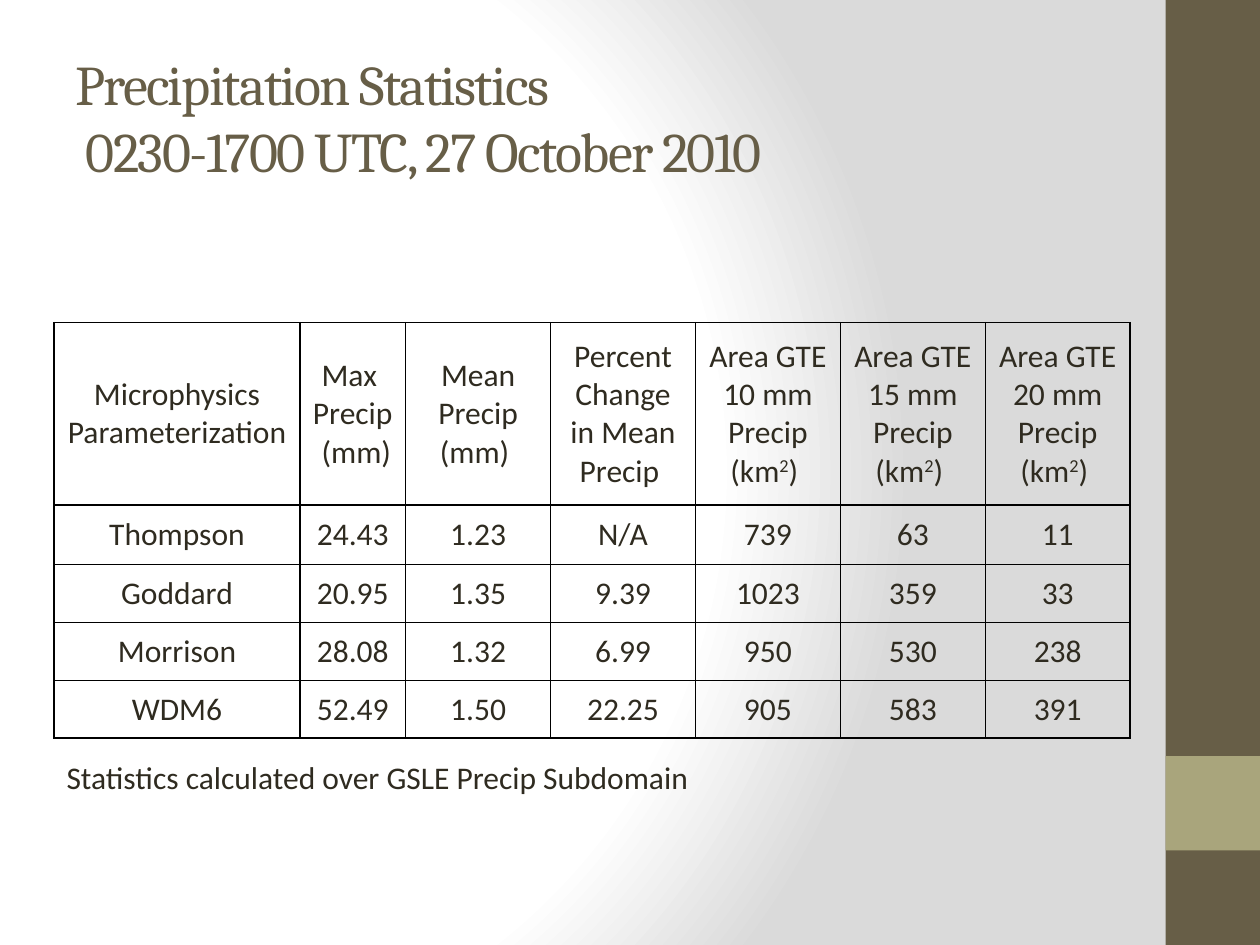
from lxml import etree
from pptx import Presentation
from pptx.dml.color import RGBColor
from pptx.enum.shapes import MSO_SHAPE
from pptx.enum.text import MSO_ANCHOR, MSO_AUTO_SIZE, PP_ALIGN
from pptx.oxml.ns import qn
from pptx.util import Inches, Pt

RECTANGLE = MSO_SHAPE.RECTANGLE
MIDDLE = MSO_ANCHOR.MIDDLE
GROW = MSO_AUTO_SIZE.SHAPE_TO_FIT_TEXT
CENTER = PP_ALIGN.CENTER

BROWN, OLIVE, INK = "675E47", "A9A57C", "2F2B20"
TITLE_FONT = {"name": "Cambria", "size": Pt(32), "bold": False}
BODY_FONT = {"name": "Calibri", "size": Pt(18), "bold": False}

COLUMN_WIDTHS = [1.95, 0.84] + [1.15] * 5
ROW_HEIGHTS = [1.45, 0.47] + [0.46] * 3
HEADERS = [
    ["Microphysics", "Parameterization "],
    ["Max ", "Precip", " (mm) "],
    ["Mean Precip (mm) "],
    ["Percent Change in Mean Precip "],
] + [[f"Area GTE {depth} mm Precip (km^2^) "] for depth in (10, 15, 20)]
RESULTS = [
    ["Thompson", "24.43", "1.23", "N/A", "739", "63", "11"],
    ["Goddard", "20.95", "1.35", "9.39", "1023", "359", "33"],
    ["Morrison", "28.08", "1.32", "6.99", "950", "530", "238"],
    ["WDM6", "52.49", "1.50", "22.25", "905", "583", "391"],
]


def color(value):
    return RGBColor.from_string(value)


def style_font(font, values, ink):
    for name, value in values.items():
        setattr(font, name, value)
    font.color.rgb = color(ink)


def paint_background(page):
    page.background.fill.gradient()
    gradient = page.element.find(".//" + qn("a:gradFill"))
    for child in list(gradient):
        gradient.remove(child)
    stops = etree.SubElement(gradient, qn("a:gsLst"))
    for position, shade in ((0, "FFFFFF"), (75, "FFFFFF"), (100, "DADADA")):
        stop = etree.SubElement(stops, qn("a:gs"), pos=str(position * 1000))
        etree.SubElement(stop, qn("a:srgbClr"), val=shade)
    circle = etree.SubElement(gradient, qn("a:path"), {"path": "circle"})
    etree.SubElement(circle, qn("a:fillToRect"), l="20000", t="50000", r="100000", b="50000")


def add_block(page, left, top, width, height, fill):
    block = page.shapes.add_shape(RECTANGLE, left, top, width, height)
    block.shadow.inherit = False
    block.fill.solid()
    block.fill.fore_color.rgb = color(fill)
    block.line.fill.background()


def add_sidebar(page, left, top, width, height):
    add_block(page, left, top, width, height, BROWN)
    add_block(page, left, top + Inches(6), width, width, OLIVE)


def add_title(page, left, top, width, height):
    frame = page.shapes.add_textbox(left, top, width, height).text_frame
    frame.word_wrap = True
    frame.vertical_anchor = MIDDLE
    para = frame.paragraphs[0]
    para.text = "Precipitation Statistics\v 0230-1700 UTC, 27 October 2010"
    for span in para.runs:
        style_font(span.font, TITLE_FONT, BROWN)
        span.font._element.set("spc", "-100")


def add_borders(cell):
    properties = cell._tc.get_or_add_tcPr()
    for index, side in enumerate(("lnL", "lnR", "lnT", "lnB")):
        line = etree.Element(qn("a:" + side), w=str(Pt(1)))
        fill = etree.SubElement(line, qn("a:solidFill"))
        etree.SubElement(fill, qn("a:srgbClr"), val="000000")
        properties.insert(index, line)


def fill_cell(cell, lines):
    cell.fill.background()
    cell.vertical_anchor = MIDDLE
    add_borders(cell)
    frame = cell.text_frame
    for index, line in enumerate(lines):
        para = frame.add_paragraph() if index else frame.paragraphs[0]
        para.alignment = CENTER
        for order, piece in enumerate(line.split("^")):
            span = para.add_run()
            span.text = piece
            style_font(span.font, BODY_FONT, INK)
            if order % 2:
                span.font._element.set("baseline", "30000")


def add_statistics(page, left, top, width, height):
    rows = [HEADERS] + [[[value] for value in result] for result in RESULTS]
    table = page.shapes.add_table(len(rows), len(HEADERS), left, top, width, height).table
    table.first_row = table.horz_banding = False
    for column, size in zip(table.columns, COLUMN_WIDTHS):
        column.width = Inches(size)
    for row, size, contents in zip(table.rows, ROW_HEIGHTS, rows):
        row.height = Inches(size)
        for cell, lines in zip(row.cells, contents):
            fill_cell(cell, lines)
            if contents is not HEADERS:
                cell.margin_left = cell.margin_right = Inches(0.07)
                cell.margin_top = cell.margin_bottom = 0


def add_note(page, left, top, width, height):
    frame = page.shapes.add_textbox(left, top, width, height).text_frame
    frame.word_wrap = False
    frame.auto_size = GROW
    span = frame.paragraphs[0].add_run()
    span.text = "Statistics calculated over GSLE Precip Subdomain"
    style_font(span.font, BODY_FONT, INK)


def main():
    deck = Presentation()
    deck.slide_width, deck.slide_height = Inches(10), Inches(7.5)
    page = deck.slides.add_slide(deck.slide_layouts[6])
    paint_background(page)
    add_sidebar(page, Inches(9.25), 0, Inches(0.75), deck.slide_height)
    add_title(page, Inches(0.5), Inches(0.3), Inches(8.33), Inches(1.25))
    add_statistics(page, Inches(0.43), Inches(2.56), Inches(8.56), Inches(3.29))
    add_note(page, Inches(0.43), Inches(5.97), Inches(5.21), Inches(0.4))
    deck.save("out.pptx")


if __name__ == "__main__":
    main()
